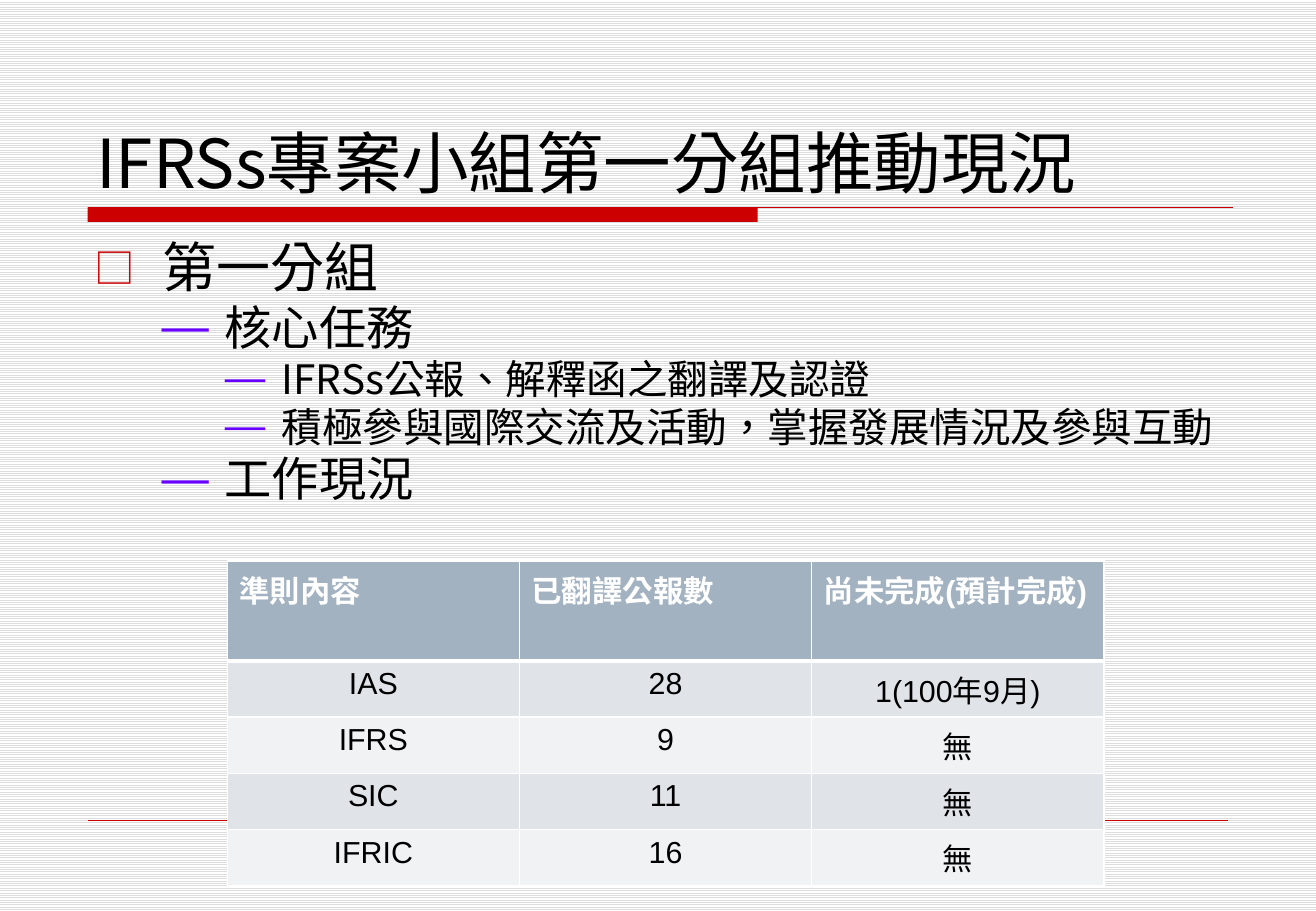
import pptx
import pptx.util
import pptx.dml.color
import pptx.enum.dml
import pptx.enum.lang
import pptx.enum.shapes
import pptx.enum.text
import pptx.oxml.ns
import lxml.etree

Cm = pptx.util.Cm
Pt = pptx.util.Pt
ALIGN = pptx.enum.text.PP_ALIGN
ANCHOR = pptx.enum.text.MSO_ANCHOR
CJK = "Noto Sans CJK SC"
RED, PURPLE, BLACK, WHITE = "CC0000", "6600FF", "000000", "FFFFFF"
HEADER, BANDS = "A3B2C1", ("E0E4E9", "F0F2F4")

OUTLINE_STYLES = [
    dict(size=32, indent=1.42, hang=1.42, char="□", color=RED, font=CJK, scale=75),
    dict(size=28, indent=2.72, hang=1.32, char="—", color=PURPLE, font="Arial", scale=100),
    dict(size=24, indent=3.91, hang=1.19, char="—", color=PURPLE, font="Arial", scale=100),
]
OUTLINE = [
    (0, "第一分組"),
    (1, "核心任務"),
    (2, "IFRSs公報、解釋函之翻譯及認證"),
    (2, "積極參與國際交流及活動，掌握發展情況及參與互動"),
    (1, "工作現況"),
]
STANDARDS = [
    ("準則內容", "已翻譯公報數", "尚未完成(預計完成)"),
    ("IAS", "28", "1(100年9月)"),
    ("IFRS", "9", "無"),
    ("SIC", "11", "無"),
    ("IFRIC", "16", "無"),
]


def rgb(value):
    return pptx.dml.color.RGBColor.from_string(value)


def add_xml(parent, tag, **attrs):
    child = lxml.etree.SubElement(parent, pptx.oxml.ns.qn(tag))
    for name, value in attrs.items():
        child.set(name, str(value))
    return child


def add_text(p, text, size=18, font=CJK, color=BLACK, bold=False, align=ALIGN.LEFT):
    p.alignment = align
    r = p.add_run()
    r.text = text
    r.font.size = Pt(size)
    r.font.name = font
    r.font.bold = bold
    r.font.color.rgb = rgb(color)
    r.font.language_id = pptx.enum.lang.MSO_LANGUAGE_ID.TRADITIONAL_CHINESE
    add_xml(r.font._element, "a:ea", typeface=CJK)


def set_frame(tf, top, bottom, anchor):
    tf.word_wrap = True
    tf.auto_size = pptx.enum.text.MSO_AUTO_SIZE.NONE
    tf.vertical_anchor = anchor
    tf.margin_left = tf.margin_right = Cm(0.28)
    tf.margin_top, tf.margin_bottom = Cm(top), Cm(bottom)


def add_line(s, x, y, w, width):
    line = s.shapes.add_connector(
        pptx.enum.shapes.MSO_CONNECTOR.STRAIGHT, Cm(x), Cm(y), Cm(x + w), Cm(y))
    line.line.color.rgb = rgb(RED)
    line.line.width = Pt(width)
    add_xml(line._element.spPr, "a:effectLst")


def add_title_rule(s, x, y, w, h):
    bar = s.shapes.add_shape(
        pptx.enum.shapes.MSO_SHAPE.RECTANGLE, Cm(x), Cm(y), Cm(w * 0.585), Cm(h))
    bar.shadow.inherit = False
    bar.fill.solid()
    bar.fill.fore_color.rgb = rgb(RED)
    bar.line.fill.background()
    add_line(s, x, y, w, 0.75)


def add_title(s, x, y, w, h):
    title = s.shapes.title
    title.left, title.top, title.width, title.height = Cm(x), Cm(y), Cm(w), Cm(h)
    set_frame(title.text_frame, 0.13, 0, ANCHOR.BOTTOM)
    add_text(title.text_frame.paragraphs[0], "IFRSs專案小組第一分組推動現況", size=40)


def add_bullet(p, indent, hang, char, color, font, scale):
    pPr = p._p.get_or_add_pPr()
    pPr.set("marL", str(Cm(indent)))
    pPr.set("indent", str(-Cm(hang)))
    add_xml(add_xml(pPr, "a:buClr"), "a:srgbClr", val=color)
    add_xml(pPr, "a:buSzPct", val=scale * 1000)
    add_xml(pPr, "a:buFont", typeface=font)
    add_xml(pPr, "a:buChar", char=char)


def add_outline(s, x, y, w, h):
    tf = s.shapes.add_textbox(Cm(x), Cm(y), Cm(w), Cm(h)).text_frame
    set_frame(tf, 0.25, 0.13, ANCHOR.TOP)
    for i, (level, text) in enumerate(OUTLINE):
        p = tf.add_paragraph() if i else tf.paragraphs[0]
        style = dict(OUTLINE_STYLES[level])
        size = style.pop("size")
        p.level = level
        add_bullet(p, **style)
        p.line_spacing = 0.82
        if i:
            p.space_before = Pt(size * 0.2)
        add_text(p, text, size=size)


def set_borders(cell, **widths):
    tcPr = cell._tc.get_or_add_tcPr()
    for i, side in enumerate("LRTB"):
        ln = add_xml(tcPr, "a:ln" + side, w=Pt(widths.get(side, 1)))
        add_xml(add_xml(ln, "a:solidFill"), "a:srgbClr", val=WHITE)
        tcPr.insert(i, ln)


def add_standards_table(s, x, y, w, h):
    rows, cols = len(STANDARDS), len(STANDARDS[0])
    table = s.shapes.add_table(rows, cols, Cm(x), Cm(y), Cm(w), Cm(h)).table
    for i, values in enumerate(STANDARDS):
        for j, value in enumerate(values):
            cell = table.cell(i, j)
            cell.fill.solid()
            cell.fill.fore_color.rgb = rgb(BANDS[(i - 1) % 2] if i else HEADER)
            set_borders(cell, T=3 if i == 1 else 1, B=1 if i else 3)
            add_text(cell.text_frame.paragraphs[0], value, font="Arial",
                     color=BLACK if i else WHITE, bold=i == 0,
                     align=ALIGN.CENTER if i else ALIGN.LEFT)


def set_background(s):
    fill = s.background.fill
    fill.patterned()
    fill.pattern = pptx.enum.dml.MSO_PATTERN.LIGHT_HORIZONTAL
    fill.fore_color.rgb = rgb("DDDDDD")
    fill.back_color.rgb = rgb(WHITE)


def main():
    prs = pptx.Presentation()
    prs.slide_width, prs.slide_height = Cm(27.51), Cm(19.05)
    s = prs.slides.add_slide(prs.slide_layouts[5])
    set_background(s)
    add_title_rule(s, 1.83, 4.34, 23.95, 0.3)
    add_line(s, 1.83, 17.15, 23.85, 0.25)
    add_title(s, 1.73, 0.84, 24.08, 3.38)
    add_outline(s, 1.7, 4.88, 24.08, 11.86)
    add_standards_table(s, 4.75, 11.73, 18.33, 5.15)
    prs.save("out.pptx")


if __name__ == "__main__":
    main()
